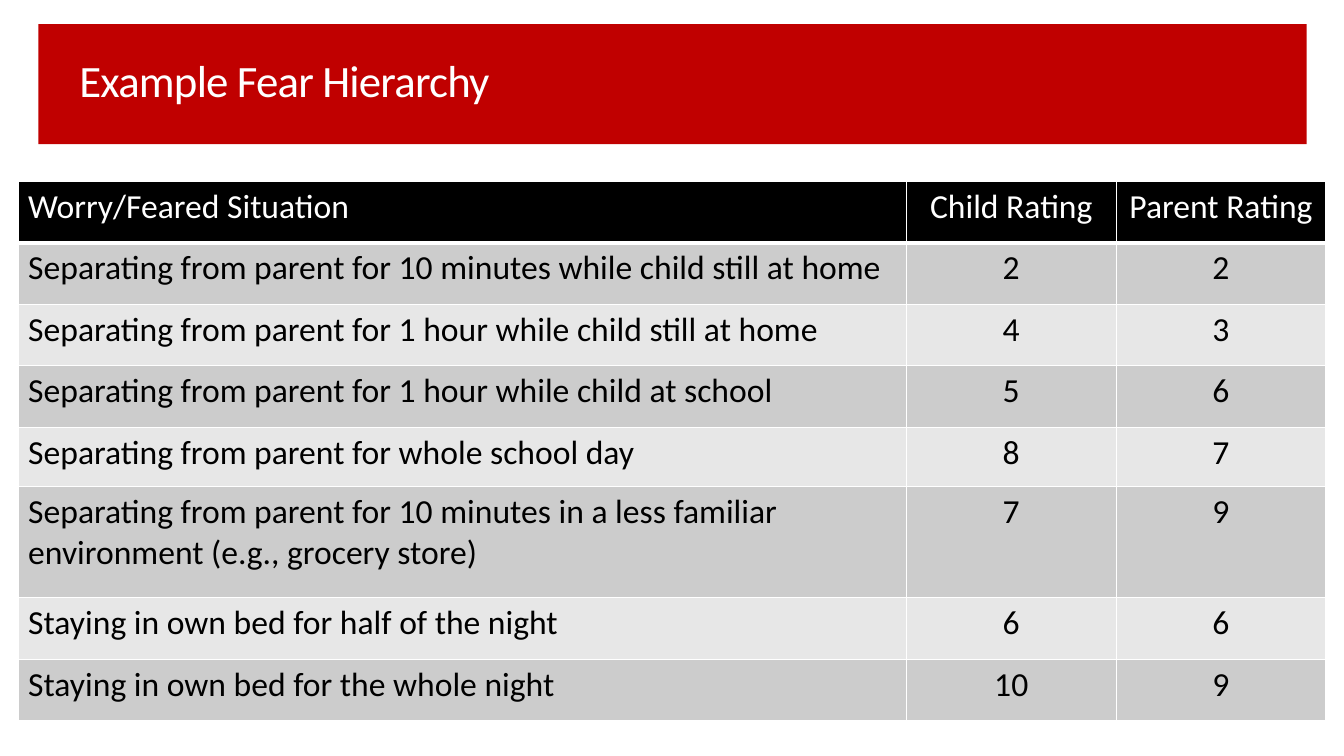
import pptx
import pptx.dml.color
import pptx.enum.shapes
import pptx.enum.text
import pptx.oxml
import pptx.oxml.ns
import pptx.util

Inches = pptx.util.Inches
Pt = pptx.util.Pt
ALIGN = pptx.enum.text.PP_ALIGN
MIDDLE = pptx.enum.text.MSO_ANCHOR.MIDDLE

HEAD = ("Worry/Feared Situation", "Child Rating", "Parent Rating")
FEARS = [
    ("Separating from parent for 10 minutes while child still at home", 2, 2),
    ("Separating from parent for 1 hour while child still at home", 4, 3),
    ("Separating from parent for 1 hour while child at school", 5, 6),
    ("Separating from parent for whole school day", 8, 7),
    ("Separating from parent for 10 minutes in a less familiar "
     "environment (e.g., grocery store)", 7, 9),
    ("Staying in own bed for half of the night", 6, 6),
    ("Staying in own bed for the whole night", 10, 9),
]
WIDTHS = (8.81, 2.08, 2.08)
HEIGHTS = (0.61, 0.61, 0.61, 0.61, 0.59, 1.1, 0.61, 0.61)


def color(code):
    return pptx.dml.color.RGBColor.from_string(code)


def write(frame, text, size=24, ink="000000", font="Calibri",
          align=ALIGN.LEFT, lines=None, track=None):
    para = frame.paragraphs[0]
    para.alignment = align
    if lines:
        para.line_spacing = lines
    run = para.add_run()
    run.text = text
    run.font.size = Pt(size)
    run.font.name = font
    run.font.color.rgb = color(ink)
    if track is not None:
        run.font._element.set("spc", str(round(track * 100)))


class Deck:
    red, white, black = "C00000", "FFFFFF", "000000"
    bands = ("CCCCCC", "E7E7E7")

    def __init__(self):
        self.show = pptx.Presentation()
        self.show.slide_width = Inches(13.33)
        self.show.slide_height = Inches(7.5)
        self.slide = self.show.slides.add_slide(self.show.slide_layouts[6])

    def bar(self, *place):
        kind = pptx.enum.shapes.MSO_SHAPE.RECTANGLE
        shape = self.slide.shapes.add_shape(kind, *map(Inches, place))
        shape.shadow.inherit = False
        shape.fill.solid()
        shape.fill.fore_color.rgb = color(self.red)
        shape.line.fill.background()

    def title(self, text, *place):
        box = self.slide.shapes.add_textbox(*map(Inches, place))
        frame = box.text_frame
        frame.word_wrap = True
        frame.vertical_anchor = MIDDLE
        write(frame, text, size=32, ink=self.white, lines=0.9, track=-0.6)

    def edge(self, cell, side, width):
        xml = (f'<a:ln{side} {pptx.oxml.ns.nsdecls("a")} w="{Pt(width)}">'
               f'<a:solidFill><a:srgbClr val="{self.white}"/></a:solidFill>'
               f'</a:ln{side}>')
        cell._tc.get_or_add_tcPr().append(pptx.oxml.parse_xml(xml))

    def table(self, rows, widths, heights, left, top):
        size = (left, top, sum(widths), sum(heights))
        grid = self.slide.shapes.add_table(
            len(rows), len(widths), *map(Inches, size)).table
        for col, width in zip(grid.columns, widths):
            col.width = Inches(width)
        for row, height in zip(grid.rows, heights):
            row.height = Inches(height)
        for r, row in enumerate(rows):
            for c, value in enumerate(row):
                self.cell(grid.cell(r, c), str(value), r, c)

    def cell(self, cell, text, r, c):
        head = r == 0
        # Borders come before the fill in the cell's XML
        for side in "LRTB":
            self.edge(cell, side, 3 if head and side == "B" else 1)
        cell.fill.solid()
        fill = self.black if head else self.bands[(r - 1) % 2]
        cell.fill.fore_color.rgb = color(fill)
        write(cell.text_frame, text, ink=self.white if head else self.black,
              align=ALIGN.CENTER if c else ALIGN.LEFT)


def main():
    deck = Deck()
    # Title band
    deck.bar(0.38, 0.24, 12.58, 1.19)
    deck.title("Example Fear Hierarchy", 0.69, 0.33, 11.54, 0.99)
    # Ratings table
    deck.table([HEAD] + FEARS, WIDTHS, HEIGHTS, 0.18, 1.8)
    deck.show.save("out.pptx")


if __name__ == "__main__":
    main()
